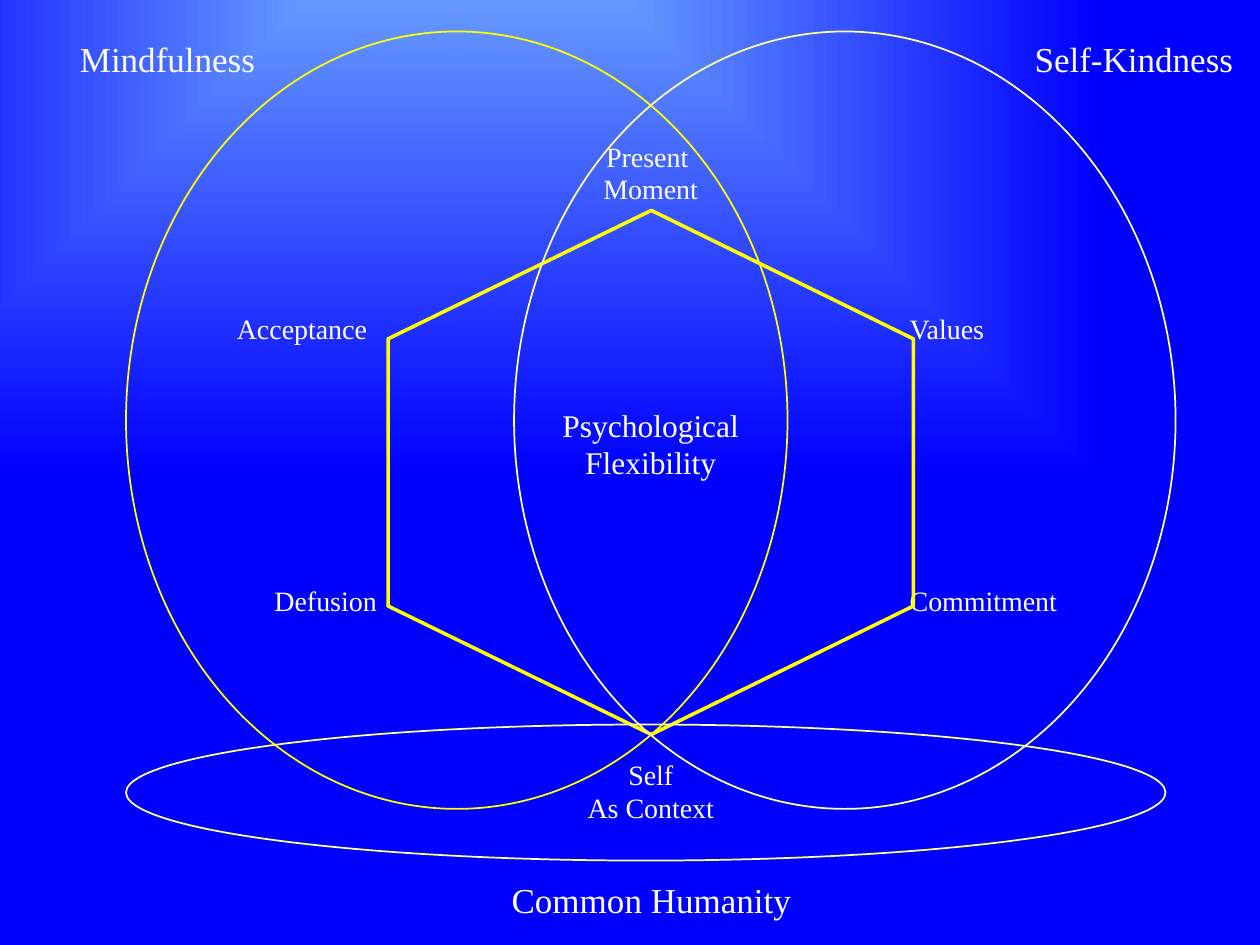
from dataclasses import dataclass

from lxml import etree
from pptx import Presentation
from pptx.dml.color import RGBColor
from pptx.enum.shapes import MSO_SHAPE
from pptx.enum.text import MSO_ANCHOR, PP_ALIGN
from pptx.oxml.ns import qn
from pptx.util import Inches, Pt

OVAL = MSO_SHAPE.OVAL
TOP = MSO_ANCHOR.TOP
LEFT, CENTER = PP_ALIGN.LEFT, PP_ALIGN.CENTER


@dataclass(frozen=True)
class Theme:
    font: str = "Times New Roman"
    text: RGBColor = RGBColor(255, 255, 255)
    glow: RGBColor = RGBColor(0x66, 0x99, 0xFF)
    blue: RGBColor = RGBColor(0, 0, 255)
    yellow: RGBColor = RGBColor(255, 255, 0)
    cream: RGBColor = RGBColor(255, 255, 0x99)
    process: int = 16
    core: int = 18
    heading: int = 20


theme = Theme()


def add_polygon(slide, corners):
    points = [(Inches(x), Inches(y)) for x, y in corners]
    builder = slide.shapes.build_freeform(*points[0])
    builder.add_line_segments(points[1:], close=True)
    shape = builder.convert_to_shape()
    shape.shadow.inherit = False
    shape.fill.background()
    return shape


def add_label(slide, text, box, size, alignment, space_before):
    x, y, width, height = box
    shape = add_polygon(slide, [(x, y), (x + width, y),
                                (x + width, y + height), (x, y + height)])
    shape.line.fill.background()
    text_frame = shape.text_frame
    text_frame.word_wrap = True
    text_frame.vertical_anchor = TOP
    text_frame.margin_left = text_frame.margin_right = Inches(0.05)
    text_frame.margin_top = text_frame.margin_bottom = Inches(0.05)
    text_frame.text = text
    for paragraph in text_frame.paragraphs:
        paragraph.alignment = alignment
        paragraph.space_before = Pt(space_before)
        if len(text_frame.paragraphs) > 1:
            paragraph.line_spacing = 0.5
        for run in paragraph.runs:
            run.font.name = theme.font
            run.font.size = Pt(size)
            run.font.color.rgb = theme.text


presentation = Presentation()
presentation.slide_width = Inches(10)
presentation.slide_height = Inches(7.5)
slide = presentation.slides.add_slide(presentation.slide_layouts[6])

background = slide.background.fill
background.gradient()
for stop, color in zip(background.gradient_stops, (theme.glow, theme.blue)):
    stop.color.rgb = color
gradient = slide.element.find(".//" + qn("a:gradFill"))
gradient.remove(gradient.find(qn("a:lin")))
gradient_path = etree.SubElement(gradient, qn("a:path"), path="rect")
etree.SubElement(gradient_path, qn("a:fillToRect"),
                 l="37500", t="-20000", r="62500", b="120000")

labels = [
    ("Defusion", (1.42, 4.58, 2.33, 0.34), theme.process, CENTER, 9),
    ("Commitment", (7.17, 4.58, 2.33, 0.34), theme.process, LEFT, 9),
    ("Psychological Flexibility", (4, 3.17, 2.33, 0.67), theme.core, CENTER, 10),
    ("Acceptance", (1.83, 2.42, 2.58, 0.74), theme.process, LEFT, 9),
    ("Present \nMoment", (4.08, 1.17, 2.17, 0.6), theme.process, CENTER, 9),
    ("Self\nAs Context", (4, 6.08, 2.33, 0.6), theme.process, CENTER, 9),
    ("Values", (7.17, 2.42, 2.33, 0.34), theme.process, LEFT, 9),
    ("Common Humanity", (2.92, 6.92, 4.5, 0.41), theme.heading, CENTER, 0),
    ("Mindfulness", (-0.92, 0.25, 4.5, 0.41), theme.heading, CENTER, 0),
    ("Self-Kindness", (6.75, 0.25, 4.5, 0.41), theme.heading, CENTER, 0),
]
for label in labels:
    add_label(slide, *label)

left, middle, right = 3.08, 5.17, 7.25
top, upper, lower, bottom = 1.67, 2.69, 4.81, 5.83
hexagon = add_polygon(slide, [(right, upper), (middle, top), (left, upper),
                              (left, lower), (middle, bottom), (right, lower)])
hexagon.line.color.rgb = theme.yellow
hexagon.line.width = Pt(2)

ellipses = [
    ((1, 5.75, 8.25, 1.08), theme.cream),
    ((1, 0.25, 5.25, 6.17), theme.yellow),
    ((4.08, 0.25, 5.25, 6.17), theme.cream),
]
for box, color in ellipses:
    ellipse = slide.shapes.add_shape(OVAL, *map(Inches, box))
    ellipse.shadow.inherit = False
    ellipse.fill.background()
    ellipse.line.color.rgb = color
    ellipse.line.width = Pt(1)

presentation.save("out.pptx")
